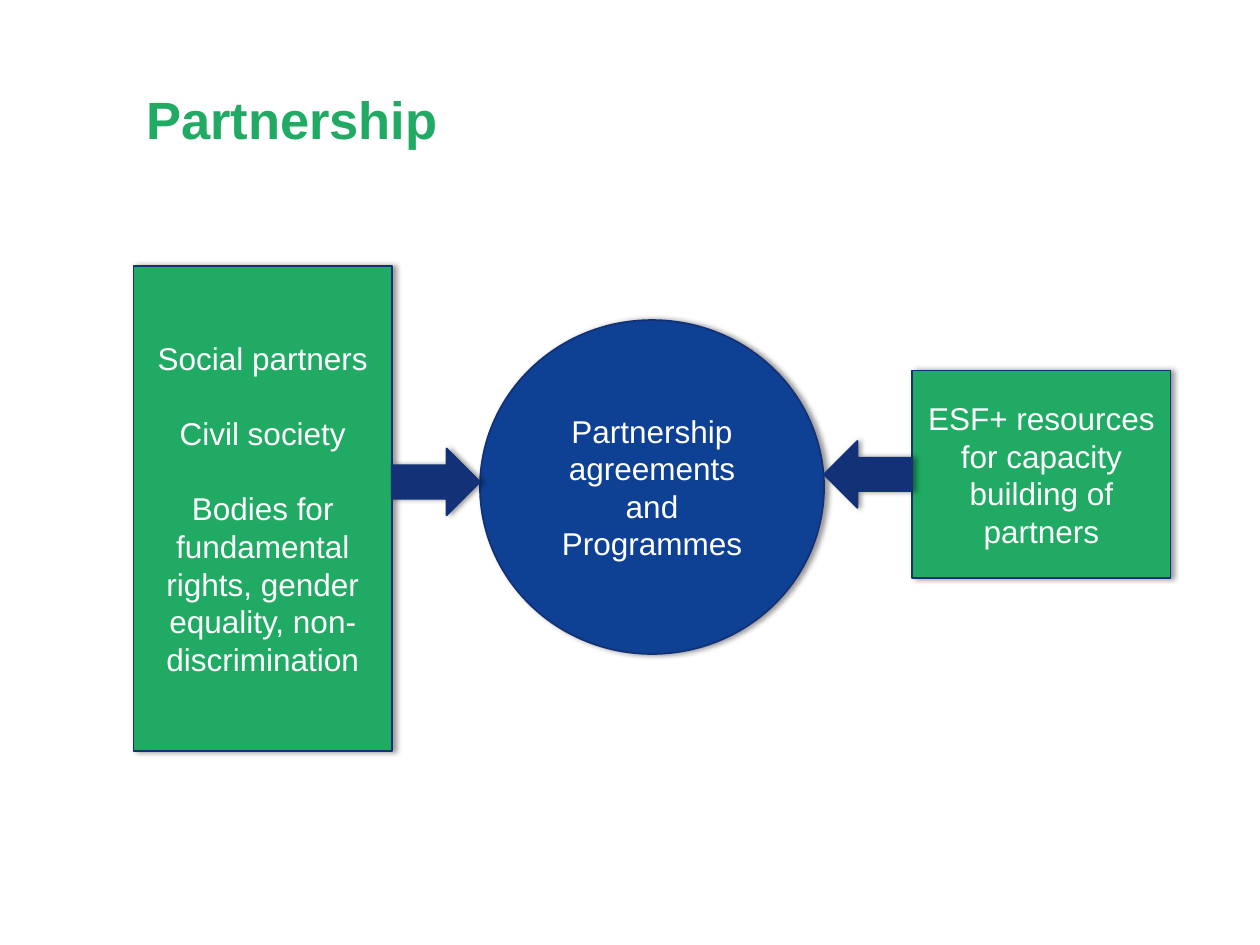
from pptx import Presentation
from pptx.dml.color import RGBColor
from pptx.enum.shapes import MSO_SHAPE as Shape
from pptx.enum.text import MSO_ANCHOR as Anchor, PP_ALIGN as Align
from pptx.oxml import parse_xml
from pptx.oxml.ns import nsdecls
from pptx.util import Pt

GREEN, BLUE, NAVY, WHITE = "20AA63", "0E4194", "133176", "FFFFFF"
LINE = 21.5


def color(code):
    return RGBColor.from_string(code)


def write(frame, *lines, size=18, ink=WHITE, bold=False, align=Align.CENTER,
          anchor=Anchor.MIDDLE, gap=0, pitch=None):
    frame.word_wrap = True
    frame.vertical_anchor = anchor
    for i, line in enumerate(lines):
        para = frame.add_paragraph() if i else frame.paragraphs[0]
        para.text = line
        para.alignment = align
        para.space_before = Pt(gap if i else 0)
        if pitch:
            para.line_spacing = Pt(pitch)
        font = para.font
        font.name, font.size, font.bold = "Arial", Pt(size), bold
        font.color.rgb = color(ink)


def shade(shape):
    """Give the shape a soft shadow to its right."""
    shape.shadow.inherit = False
    old = shape._element.spPr.find(
        "{http://schemas.openxmlformats.org/drawingml/2006/main}effectLst")
    old.append(parse_xml(
        f'<a:outerShdw {nsdecls("a")} blurRad="{Pt(3.1)}" dist="{Pt(1.8)}" '
        'dir="0" algn="ctr" rotWithShape="0"><a:srgbClr val="000000">'
        '<a:alpha val="40000"/></a:srgbClr></a:outerShdw>'))


def block(slide, kind, box, fill, *lines, gap=0):
    shape = slide.shapes.add_shape(kind, *map(Pt, box))
    shape.fill.solid()
    shape.fill.fore_color.rgb = color(fill)
    shape.line.color.rgb = color(NAVY)
    shape.line.width = Pt(1)
    shade(shape)
    if lines:
        write(shape.text_frame, *lines, gap=gap, pitch=LINE)


def head(slide, box, text):
    title = slide.shapes.title
    title.left, title.top, title.width, title.height = map(Pt, box)
    title.text_frame.margin_top = Pt(6.7)
    write(title.text_frame, text, size=30, ink=GREEN, bold=True,
          align=Align.LEFT, anchor=Anchor.TOP)


def diagram(slide, box):
    """Two groups of partners that feed the central circle."""
    x, y, width, height = box
    side, wide, thick = 147.6, 196.6, 38.2
    hub = x + 198
    right = x + width - side
    block(slide, Shape.RECTANGLE, (x, y, side, height), GREEN,
          "Social partners", "Civil society",
          "Bodies for fundamental rights, gender equality, non-discrimination",
          gap=LINE)
    block(slide, Shape.OVAL, (hub, y + 31, wide, 190.8), BLUE,
          "Partnership agreements", "and", "Programmes")
    block(slide, Shape.RECTANGLE, (right, y + 59.8, side, 118.8), GREEN,
          "ESF+ resources for capacity building of partners")
    start, end = x + side, hub + wide
    block(slide, Shape.RIGHT_ARROW,
          (start, y + 104.4, hub - start, thick), NAVY)
    block(slide, Shape.LEFT_ARROW,
          (end, y + 100.1, right - end, thick), NAVY)


def main():
    deck = Presentation()
    deck.slide_width, deck.slide_height = Pt(720), Pt(540)
    slide = deck.slides.add_slide(deck.slide_layouts[5])
    head(slide, (76.3, 43.2, 607.7, 56.9), "Partnership")
    diagram(slide, (76.3, 151.9, 592.6, 277.2))
    deck.save("out.pptx")


if __name__ == "__main__":
    main()
